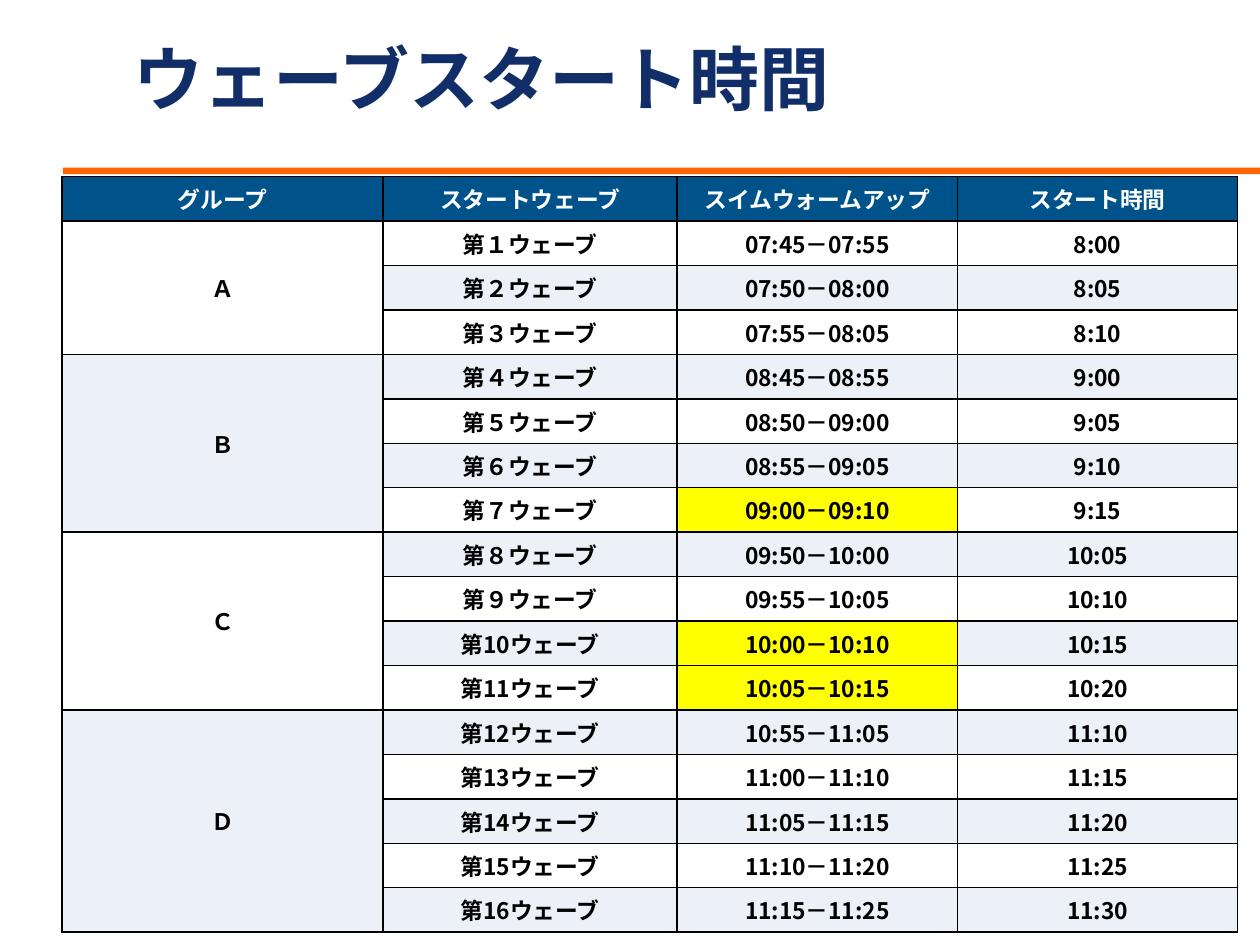
from lxml import etree
from pptx import Presentation
from pptx import util as u
from pptx.dml.color import RGBColor
from pptx.enum import shapes, text
from pptx.oxml import ns

WHITE = RGBColor(0xFF, 0xFF, 0xFF)
BLACK = RGBColor(0x00, 0x00, 0x00)
NAVY = RGBColor(0x11, 0x2E, 0x68)
BLUE = RGBColor(0x00, 0x52, 0x8B)
PALE = RGBColor(0xEC, 0xF1, 0xF8)
YELLOW = RGBColor(0xFF, 0xFF, 0x00)
ORANGE = RGBColor(0xFF, 0x66, 0x00)

HEADER = ["グループ", "スタートウェーブ", "スイムウォームアップ", "スタート時間"]
GROUPS = [("Ａ", 3), ("Ｂ", 4), ("Ｃ", 4), ("Ｄ", 5)]
WAVES = [
    ("第１ウェーブ", "07:45－07:55", "8:00"),
    ("第２ウェーブ", "07:50－08:00", "8:05"),
    ("第３ウェーブ", "07:55－08:05", "8:10"),
    ("第４ウェーブ", "08:45－08:55", "9:00"),
    ("第５ウェーブ", "08:50－09:00", "9:05"),
    ("第６ウェーブ", "08:55－09:05", "9:10"),
    ("第７ウェーブ", "09:00－09:10", "9:15"),
    ("第８ウェーブ", "09:50－10:00", "10:05"),
    ("第９ウェーブ", "09:55－10:05", "10:10"),
    ("第10ウェーブ", "10:00－10:10", "10:15"),
    ("第11ウェーブ", "10:05－10:15", "10:20"),
    ("第12ウェーブ", "10:55－11:05", "11:10"),
    ("第13ウェーブ", "11:00－11:10", "11:15"),
    ("第14ウェーブ", "11:05－11:15", "11:20"),
    ("第15ウェーブ", "11:10－11:20", "11:25"),
    ("第16ウェーブ", "11:15－11:25", "11:30"),
]
HIGHLIGHTED = {7, 10, 11}


def assign(obj, values):
    for name, value in values.items():
        setattr(obj, name, value)


class Deck:
    title_font = {"name": "Arial", "size": u.Pt(40), "bold": True}
    cell_font = {"name": "Noto Sans CJK JP", "size": u.Pt(13), "bold": True}
    title_frame = {"margin_left": 0, "margin_top": 0, "margin_right": u.Cm(0.25),
                   "margin_bottom": u.Cm(0.13), "word_wrap": True,
                   "vertical_anchor": text.MSO_ANCHOR.TOP}
    cell_format = {"margin_left": u.Cm(0.25), "margin_top": u.Cm(0.12),
                   "margin_right": u.Cm(0.25), "margin_bottom": u.Cm(0.12),
                   "vertical_anchor": text.MSO_ANCHOR.MIDDLE}

    def __init__(self, prs):
        self.s = prs.slides.add_slide(prs.slide_layouts[6])

    def bar(self, box, color):
        sp = self.s.shapes.add_shape(shapes.MSO_SHAPE.RECTANGLE, *map(u.Cm, box))
        sp.shadow.inherit = False
        sp.fill.solid()
        sp.fill.fore_color.rgb = color
        sp.line.fill.background()

    def title(self, words, box):
        tf = self.s.shapes.add_textbox(*map(u.Cm, box)).text_frame
        assign(tf, self.title_frame)
        r = tf.paragraphs[0].add_run()
        r.text = words
        assign(r.font, self.title_font)
        r.font.color.rgb = NAVY

    def table(self, rows, left, top, widths, height):
        box = (left, top, sum(widths), height)
        tbl = self.s.shapes.add_table(len(rows), len(widths), *map(u.Cm, box)).table
        tbl.horz_banding = False
        for column, width in zip(tbl.columns, widths):
            column.width = u.Cm(width)
        for i, row in enumerate(rows):
            for j, words in enumerate(row):
                self.cell(tbl.cell(i, j), words, i, j)
        return tbl

    def cell(self, cell, words, i, j):
        assign(cell, self.cell_format)
        self.borders(cell)
        cell.fill.solid()
        band = WHITE if i % 2 else PALE
        marked = j == 2 and i in HIGHLIGHTED
        cell.fill.fore_color.rgb = BLUE if i == 0 else YELLOW if marked else band
        p = cell.text_frame.paragraphs[0]
        p.alignment = text.PP_ALIGN.CENTER
        assign(p.font, self.cell_font)
        if words:
            r = p.add_run()
            r.text = words
            assign(r.font, self.cell_font)
            r.font.color.rgb = BLACK if i else WHITE

    def borders(self, cell):
        tcPr = cell._tc.get_or_add_tcPr()
        for side in ("lnL", "lnR", "lnT", "lnB"):
            ln = etree.SubElement(tcPr, ns.qn(f"a:{side}"), w=str(u.Pt(1)))
            fill = etree.SubElement(ln, ns.qn("a:solidFill"))
            etree.SubElement(fill, ns.qn("a:srgbClr"), val=str(BLACK))


def main():
    prs = Presentation()
    prs.slide_width, prs.slide_height = u.Cm(25.4), u.Cm(19.05)
    deck = Deck(prs)
    deck.bar((1.27, 3.38, 24.13, 0.13), ORANGE)
    deck.title("ウェーブスタート時間", (2.7, 0.71, 22.1, 2))

    names = [name if k == 0 else "" for name, count in GROUPS for k in range(count)]
    rows = [HEADER] + [(name, *wave) for name, wave in zip(names, WAVES)]
    tbl = deck.table(rows, 1.25, 3.56, (6.47, 5.93, 5.65, 5.65), 15.24)
    first = 1
    for index, (name, count) in enumerate(GROUPS):
        cell = tbl.cell(first, 0)
        cell.merge(tbl.cell(first + count - 1, 0))
        cell.fill.fore_color.rgb = PALE if index % 2 else WHITE
        first += count
    prs.save("out.pptx")


if __name__ == "__main__":
    main()
